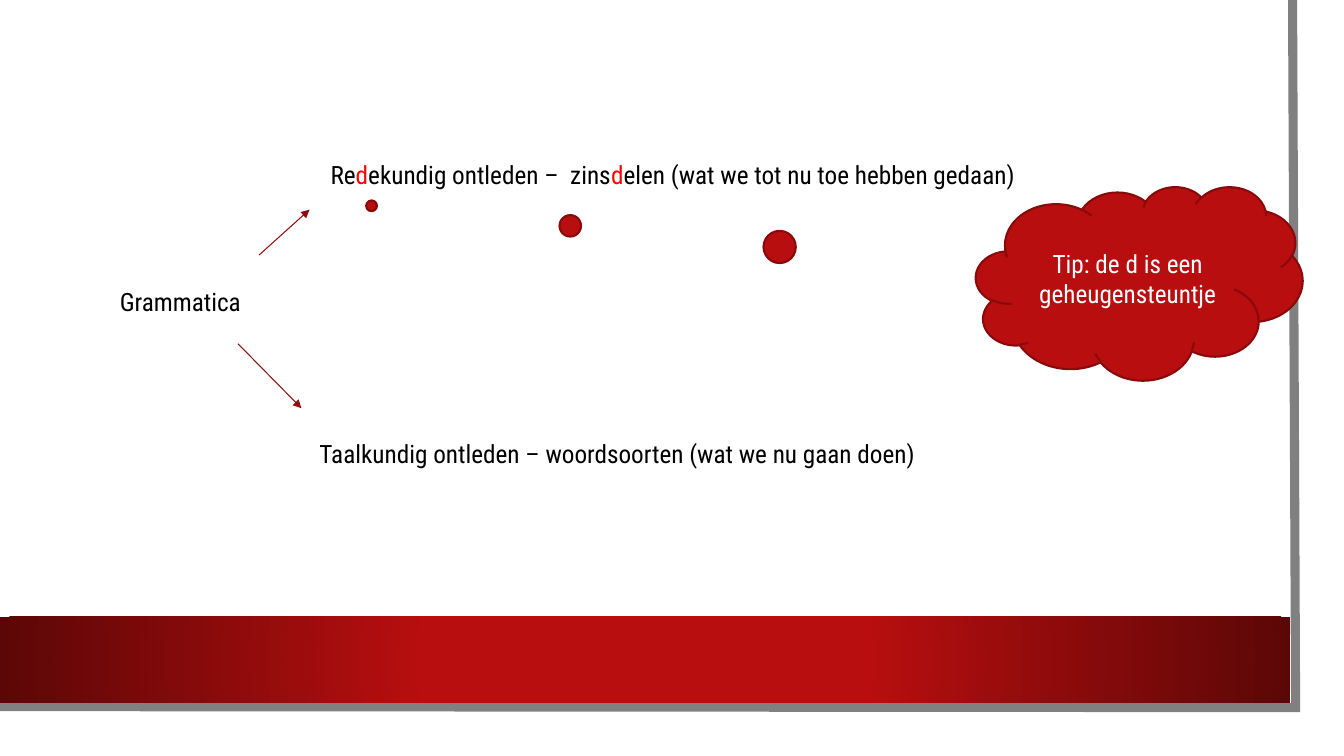
from dataclasses import dataclass

from lxml import etree
from pptx import Presentation
from pptx.dml.color import RGBColor
from pptx.enum.shapes import MSO_CONNECTOR, MSO_SHAPE
from pptx.enum.text import MSO_ANCHOR, MSO_AUTO_SIZE, PP_ALIGN
from pptx.oxml.ns import qn
from pptx.shapes.autoshape import Shape
from pptx.shapes.shapetree import SlideShapes
from pptx.text.text import Font
from pptx.util import Inches, Pt

RECT = MSO_SHAPE.RECTANGLE
CLOUD = MSO_SHAPE.CLOUD_CALLOUT
STRAIGHT = MSO_CONNECTOR.STRAIGHT
MIDDLE = MSO_ANCHOR.MIDDLE
GROW = MSO_AUTO_SIZE.SHAPE_TO_FIT_TEXT
CENTER = PP_ALIGN.CENTER
FACE = "Roboto Condensed"
BLACK, WHITE, GRAY = "000000", "FFFFFF", "808080"
RED, DARK, ACCENT = "B80E0F", "5C0707", "FF0000"


@dataclass
class Label:
    left: float
    top: float
    width: float
    words: list[str]


@dataclass
class Arrow:
    x1: float
    y1: float
    x2: float
    y2: float


LABELS = [
    Label(1.09, 2.79, 1.47, ["Grammatica"]),
    Label(3.18, 1.53, 7.26, ["Re", "d", "ekundig ontleden –  zins", "d",
                             "elen (wat we tot nu toe hebben gedaan)"]),
    Label(3.07, 4.3, 6.35,
          ["Taalkundig ontleden – woordsoorten (wat we nu gaan doen)"]),
]
ARROWS = [Arrow(2.57, 2.53, 3.07, 2.08), Arrow(2.36, 3.41, 2.99, 4.05)]


def color(code: str) -> RGBColor:
    return RGBColor.from_string(code)


def style(font: Font, code: str) -> None:
    font.name = FACE
    font.size = Pt(18)
    font.color.rgb = color(code)


def add_shape(shapes: SlideShapes, kind: MSO_SHAPE, left: float, top: float,
              width: float, height: float, fill: str) -> Shape:
    shape = shapes.add_shape(kind, Inches(left), Inches(top),
                             Inches(width), Inches(height))
    shape.shadow.inherit = False
    shape.fill.solid()
    shape.fill.fore_color.rgb = color(fill)
    shape.line.fill.background()
    return shape


def add_edge(shapes: SlideShapes) -> None:
    pen = shapes.build_freeform(Inches(12.82), 0)
    pen.add_line_segments([(Inches(12.85), Inches(7.02)),
                           (Inches(-0.03), Inches(7.01))], close=False)
    edge = pen.convert_to_shape()
    edge.shadow.inherit = False
    edge.fill.background()
    edge.line.color.rgb = color(GRAY)
    edge.line.width = Pt(6.5)
    line = edge._element.spPr.find(qn("a:ln"))
    etree.SubElement(line, qn("a:miter"), lim="800000")


def add_band(shapes: SlideShapes) -> None:
    band = add_shape(shapes, RECT, 0, 6.12, 12.8, 0.85, RED)
    band.fill.gradient()
    stops = zip(band.fill.gradient_stops, (0.34, 1), (RED, DARK))
    for stop, place, code in stops:
        stop.position = place
        stop.color.rgb = color(code)
    grad = band._element.spPr.find(qn("a:gradFill"))
    grad.remove(grad.find(qn("a:lin")))
    ring = etree.SubElement(grad, qn("a:path"), {"path": "circle"})
    etree.SubElement(ring, qn("a:fillToRect"),
                     dict.fromkeys("ltrb", "50000"))


def add_label(shapes: SlideShapes, label: Label) -> None:
    box = shapes.add_textbox(Inches(label.left), Inches(label.top),
                             Inches(label.width), Inches(0.4))
    frame = box.text_frame
    frame.word_wrap = False
    frame.auto_size = GROW
    for word in label.words:
        run = frame.paragraphs[0].add_run()
        run.text = word
        style(run.font, ACCENT if word == "d" else BLACK)


def add_cloud(shapes: SlideShapes) -> None:
    cloud = add_shape(shapes, CLOUD, 9.68, 1.85, 3.24, 1.92, RED)
    cloud.adjustments[0] = -2.35
    cloud.adjustments[1] = -0.4
    cloud.line.color.rgb = color("880A0B")
    cloud.line.width = Pt(1.5)
    frame = cloud.text_frame
    frame.word_wrap = True
    frame.vertical_anchor = MIDDLE
    frame.text = "Tip: de d is een geheugensteuntje"
    tip = frame.paragraphs[0]
    tip.alignment = CENTER
    style(tip.runs[0].font, WHITE)


def add_arrow(shapes: SlideShapes, arrow: Arrow) -> None:
    link = shapes.add_connector(STRAIGHT, Inches(arrow.x1), Inches(arrow.y1),
                                Inches(arrow.x2), Inches(arrow.y2))
    link.line.color.rgb = color("930B0C")
    link.line.width = Pt(0.75)
    props = link._element.spPr
    etree.SubElement(props.find(qn("a:ln")), qn("a:tailEnd"), type="triangle")
    etree.SubElement(props, qn("a:effectLst"))


def main() -> None:
    deck = Presentation()
    deck.slide_width = Inches(13.33)
    deck.slide_height = Inches(7.5)
    shapes = deck.slides.add_slide(deck.slide_layouts[6]).shapes
    add_shape(shapes, RECT, 0, 0, 13.1, 7.27, WHITE)
    add_edge(shapes)
    add_band(shapes)
    for label in LABELS:
        add_label(shapes, label)
    add_cloud(shapes)
    for arrow in ARROWS:
        add_arrow(shapes, arrow)
    deck.save("out.pptx")


if __name__ == "__main__":
    main()
